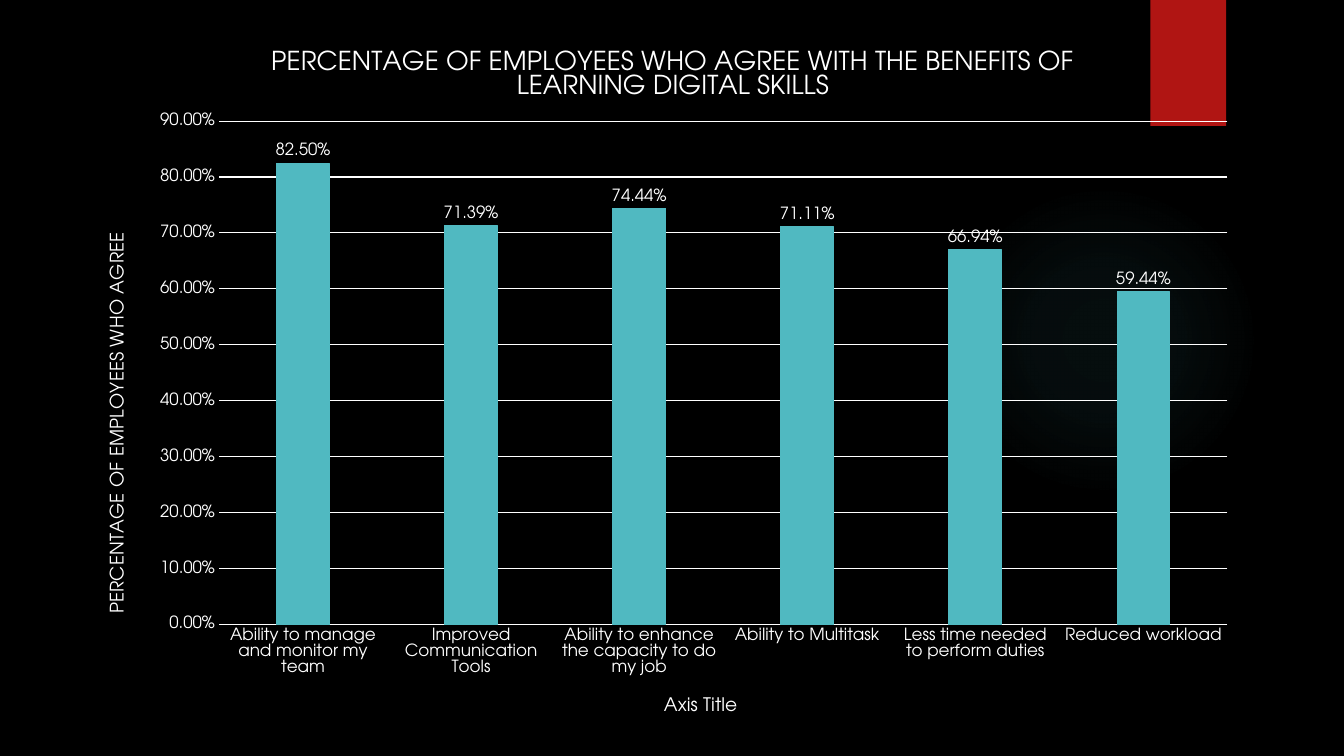
from dataclasses import dataclass

from lxml import etree
from pptx import Presentation
from pptx.chart.data import CategoryChartData
from pptx.dml.color import RGBColor
from pptx.enum.chart import XL_CHART_TYPE, XL_LABEL_POSITION, XL_TICK_MARK
from pptx.enum.shapes import MSO_SHAPE
from pptx.oxml import parse_xml
from pptx.oxml.ns import nsdecls, qn
from pptx.util import Pt

COLUMN = XL_CHART_TYPE.COLUMN_CLUSTERED
OUTSIDE_END = XL_LABEL_POSITION.OUTSIDE_END
NO_TICK = XL_TICK_MARK.NONE
OVAL = MSO_SHAPE.OVAL
RECTANGLE = MSO_SHAPE.RECTANGLE


@dataclass(frozen=True)
class Theme:
    font: str = "TeX Gyre Adventor"
    background: str = "000000"
    text: str = "FFFFFF"
    teal: str = "50B9C1"
    red: str = "B01513"
    title_size: float = 18.6
    axis_title_size: float = 13.3
    label_size: float = 12
    line_width: float = 0.75


THEME = Theme()
PERCENT = "0.00%"
BENEFITS = {
    "Ability to manage and monitor my team": 0.825,
    "Improved Communication Tools": 0.7139,
    "Ability to enhance the capacity to do my job": 0.7444,
    "Ability to Multitask": 0.7111,
    "Less time needed to perform duties": 0.6694,
    "Reduced workload": 0.5944,
}


def rgb(color):
    return RGBColor.from_string(color)


def style_font(font, size):
    font.name = THEME.font
    font.size = Pt(size)
    font.bold = False
    font.color.rgb = rgb(THEME.text)


def style_line(line, color):
    line.color.rgb = rgb(color)
    line.width = Pt(THEME.line_width)


def place(element, **fractions):
    for old in element.findall(qn("c:layout")):
        element.remove(old)
    layout = etree.Element(qn("c:layout"))
    manual = etree.SubElement(layout, qn("c:manualLayout"))
    settings = {"xMode": "edge", "yMode": "edge", **fractions}
    for name, value in settings.items():
        etree.SubElement(manual, qn(f"c:{name}")).set("val", str(value))
    tx = element.find(qn("c:tx"))
    element.insert(0 if tx is None else 1, layout)


def set_title(title, text, size, x, y):
    tf = title.text_frame
    tf.text = text
    style_font(tf.paragraphs[0].runs[0].font, size)
    place(title._element, x=x, y=y)
    return tf


def add_backdrop(slide, left, top, width, height):
    fill = slide.background.fill
    fill.solid()
    fill.fore_color.rgb = rgb(THEME.background)

    glow = slide.shapes.add_shape(
        OVAL, left + Pt(677.5), top + Pt(131.8), Pt(221.8), Pt(221.8))
    glow.shadow.inherit = False
    glow.line.fill.background()
    stops = "".join(
        f'<a:gs pos="{pos * 1000}"><a:srgbClr val="{THEME.teal}">'
        f'<a:alpha val="{alpha * 1000}"/></a:srgbClr></a:gs>'
        for pos, alpha in ((0, 7), (36, 6), (69, 0), (100, 0)))
    gradient = parse_xml(
        f'<a:gradFill {nsdecls("a")} rotWithShape="1"><a:gsLst>{stops}</a:gsLst>'
        '<a:path path="circle"><a:fillToRect l="50000" t="50000" r="50000" '
        'b="50000"/></a:path></a:gradFill>')
    glow._element.spPr.find(qn("a:prstGeom")).addnext(gradient)

    ribbon = slide.shapes.add_shape(
        RECTANGLE, left + width - Pt(138.2), top, Pt(54), height / 6)
    ribbon.shadow.inherit = False
    ribbon.fill.solid()
    ribbon.fill.fore_color.rgb = rgb(THEME.red)
    ribbon.line.fill.background()


def add_benefits_chart(slide, left, top, width, height):
    data = CategoryChartData(number_format=PERCENT)
    data.categories = list(BENEFITS)
    data.add_series("Series 1", list(BENEFITS.values()))
    chart = slide.shapes.add_chart(COLUMN, left, top, width, height, data).chart
    style_font(chart.font, THEME.label_size)
    chart.has_legend = False
    chart.has_title = True
    set_title(
        chart.chart_title,
        "PERCENTAGE OF EMPLOYEES WHO AGREE WITH THE BENEFITS OF "
        "LEARNING DIGITAL SKILLS",
        THEME.title_size, 0.15, 0.03)

    cat_axis, val_axis = chart.category_axis, chart.value_axis
    for axis in (cat_axis, val_axis):
        axis.major_tick_mark = NO_TICK
        axis.minor_tick_mark = NO_TICK
        style_font(axis.tick_labels.font, THEME.label_size)
    style_line(cat_axis.format.line, THEME.text)
    set_title(cat_axis.axis_title, "Axis Title", THEME.axis_title_size, 0.49, 0.94)

    val_axis.minimum_scale, val_axis.maximum_scale = 0, 0.9
    val_axis.major_unit = 0.1
    val_axis.format.line.fill.background()
    style_line(val_axis.major_gridlines.format.line, THEME.text)
    val_axis.tick_labels.number_format = PERCENT
    val_axis.tick_labels.number_format_is_linked = False
    tf = set_title(val_axis.axis_title, "PERCENTAGE OF EMPLOYEES WHO AGREE",
                   THEME.axis_title_size, 0.01, 0.29)
    body = tf._txBody.find(qn("a:bodyPr"))
    body.set("rot", "-5400000")
    body.set("vert", "horz")

    plot = chart.plots[0]
    plot.vary_by_categories = False
    plot.gap_width, plot.overlap = 219, -27
    series = plot.series[0]
    series.format.fill.solid()
    series.format.fill.fore_color.rgb = rgb(THEME.teal)
    style_line(series.format.line, THEME.teal)
    labels = series.data_labels
    labels.show_value = True
    labels.position = OUTSIDE_END
    labels.number_format = PERCENT
    labels.number_format_is_linked = False
    style_font(labels.font, THEME.label_size)

    plot_area = chart._chartSpace.find(f".//{qn('c:plotArea')}")
    place(plot_area, x=0.109, y=0.139, w=0.87, h=0.706)
    target = etree.Element(qn("c:layoutTarget"))
    target.set("val", "inner")
    plot_area.find(f".//{qn('c:manualLayout')}").insert(0, target)


def main():
    prs = Presentation()
    prs.slide_width, prs.slide_height = Pt(960), Pt(540)
    slide = prs.slides.add_slide(prs.slide_layouts[6])
    add_backdrop(slide, 0, 0, prs.slide_width, prs.slide_height)
    add_benefits_chart(slide, Pt(66.2), Pt(15.8), Pt(828), Pt(509))
    prs.save("out.pptx")


if __name__ == "__main__":
    main()
